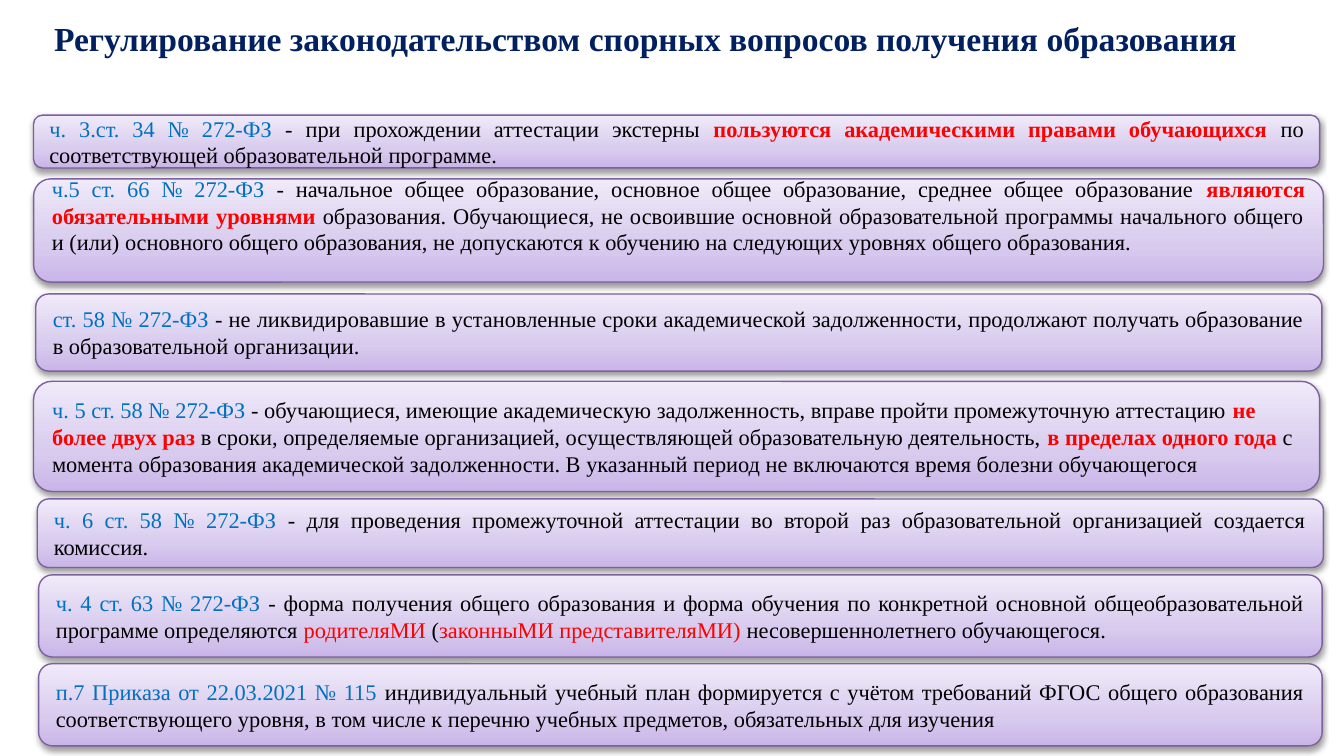
from copy import deepcopy

from lxml import etree
from pptx import Presentation
from pptx import util as u
from pptx.dml.color import RGBColor
from pptx.enum import shapes, text
from pptx.oxml.ns import qn

FONT = "Times New Roman"
COLORS = {
    "title": "002060",
    "source": "0070C0",
    "plain": "000000",
    "accent": "FF0000",
    "strong": "FF0000",
    "border": "7D60A0",
    "shadow": "000000",
}
GRADIENT = [(0, "C9B5E8"), (0.35, "D8CBEE"), (1, "F0EAF9")]
JUSTIFIED = text.PP_ALIGN.JUSTIFY
LEFT = text.PP_ALIGN.LEFT

RULES = [
    ((18, 61.7, 689, 28.3), JUSTIFIED, 3.6, [
        ("source", "ч. 3.ст. 34 № 272-ФЗ "),
        ("plain", "- при прохождении аттестации экстерны "),
        ("strong", "пользуются академическими правами обучающихся "),
        ("plain", "по соответствующей образовательной программе."),
    ]),
    ((18, 95.8, 691, 55.3), JUSTIFIED, 20, [
        ("source", "ч.5 ст. 66 № 272-ФЗ "),
        ("plain", "- начальное общее образование, основное общее образование, "
                  "среднее общее образование "),
        ("strong", "являются обязательными уровнями "),
        ("plain", "образования. Обучающиеся, не освоившие основной образовательной "
                  "программы начального общего и (или) основного общего образования, "
                  "не допускаются к обучению на следующих уровнях общего образования."),
    ]),
    ((19.2, 157.5, 689, 41.3), JUSTIFIED, 3.6, [
        ("source", "ст. 58 № 272-ФЗ "),
        ("plain", "- не ликвидировавшие в установленные сроки академической "
                  "задолженности, продолжают получать образование "
                  "в образовательной организации."),
    ]),
    ((18, 204.3, 689, 59), LEFT, 3.6, [
        ("source", "ч. 5 ст. 58 № 272-ФЗ "),
        ("plain", "- обучающиеся, имеющие академическую задолженность, "
                  "вправе пройти промежуточную аттестацию "),
        ("strong", "не более двух раз "),
        ("plain", "в сроки, определяемые организацией, осуществляющей "
                  "образовательную деятельность, "),
        ("strong", "в пределах одного года "),
        ("plain", "с момента образования академической задолженности. "
                  "В указанный период не включаются время болезни обучающегося"),
    ]),
    ((20, 267.3, 689, 36.7), JUSTIFIED, 3.6, [
        ("source", "ч. 6 ст. 58 № 272-ФЗ "),
        ("plain", "- для проведения промежуточной аттестации во второй раз "
                  "образовательной организацией создается комиссия."),
    ]),
    ((20.7, 308, 687.6, 44), JUSTIFIED, 3.6, [
        ("source", "ч. 4 ст. 63 № 272-ФЗ "),
        ("plain", "- форма получения общего образования и форма обучения по конкретной "
                  "основной общеобразовательной программе определяются "),
        ("accent", "родителяМИ "),
        ("plain", "("),
        ("accent", "законныМИ представителяМИ) "),
        ("plain", "несовершеннолетнего обучающегося."),
    ]),
    ((20.7, 355.6, 687.6, 44), JUSTIFIED, 3.6, [
        ("source", "п.7 Приказа от 22.03.2021 № 115 "),
        ("plain", "индивидуальный учебный план формируется с учётом требований ФГОС "
                  "общего образования соответствующего уровня, в том числе к перечню "
                  "учебных предметов, обязательных для изучения"),
    ]),
]


def color(name):
    """Return the named colour."""
    return RGBColor.from_string(COLORS[name])


def format_span(span, size, name, bold):
    """Set the font of one run."""
    span.font.name = FONT
    span.font.size = u.Pt(size)
    span.font.bold = bold
    span.font.color.rgb = color(name)


def add_title(page, box):
    """Place the heading in the title placeholder."""
    title = page.shapes.title
    title.left, title.top, title.width, title.height = map(u.Pt, box)
    frame = title.text_frame
    frame.text = "Регулирование законодательством спорных вопросов получения образования"
    frame.auto_size = text.MSO_AUTO_SIZE.NONE
    frame.vertical_anchor = text.MSO_ANCHOR.MIDDLE
    para = frame.paragraphs[0]
    para.alignment = text.PP_ALIGN.CENTER
    format_span(para.runs[0], 18, "title", True)


def paint_gradient(shape):
    """Fill a shape with the three-stop vertical gradient."""
    fill = shape.fill
    fill.gradient()
    fill.gradient_angle = 90
    stops = shape._element.spPr.find(qn("a:gradFill")).find(qn("a:gsLst"))
    stops.insert(1, deepcopy(stops[0]))
    for stop, (position, value) in zip(fill.gradient_stops, GRADIENT):
        stop.position = position
        stop.color.rgb = RGBColor.from_string(value)


def add_shadow(shape):
    """Give a shape a soft shadow below it."""
    shape.shadow.inherit = False
    effects = shape._element.spPr.find(qn("a:effectLst"))
    shadow = etree.SubElement(
        effects, qn("a:outerShdw"), blurRad=str(u.Pt(3.1)), dist=str(u.Pt(1.6)),
        dir="5400000", rotWithShape="0")
    tint = etree.SubElement(shadow, qn("a:srgbClr"), val=COLORS["shadow"])
    etree.SubElement(tint, qn("a:alpha"), val="38000")


def add_rule(page, box, alignment, bottom, spans):
    """Place one rounded panel with a legal provision."""
    panel = page.shapes.add_shape(
        shapes.MSO_SHAPE.ROUNDED_RECTANGLE, *map(u.Pt, box))
    paint_gradient(panel)
    panel.line.color.rgb = color("border")
    panel.line.width = u.Pt(0.75)
    add_shadow(panel)
    frame = panel.text_frame
    frame.word_wrap = True
    frame.vertical_anchor = text.MSO_ANCHOR.MIDDLE
    frame.margin_bottom = u.Pt(bottom)
    para = frame.paragraphs[0]
    para.alignment = alignment
    for name, words in spans:
        span = para.add_run()
        span.text = words
        format_span(span, 12, name, name == "strong")


def main():
    """Build the slide and save it."""
    deck = Presentation()
    deck.slide_width, deck.slide_height = u.Pt(720), u.Pt(405)
    page = deck.slides.add_slide(deck.slide_layouts[5])
    add_title(page, (8.6, 10.1, 674.6, 20.2))
    for rule in RULES:
        add_rule(page, *rule)
    deck.save("out.pptx")


if __name__ == "__main__":
    main()
